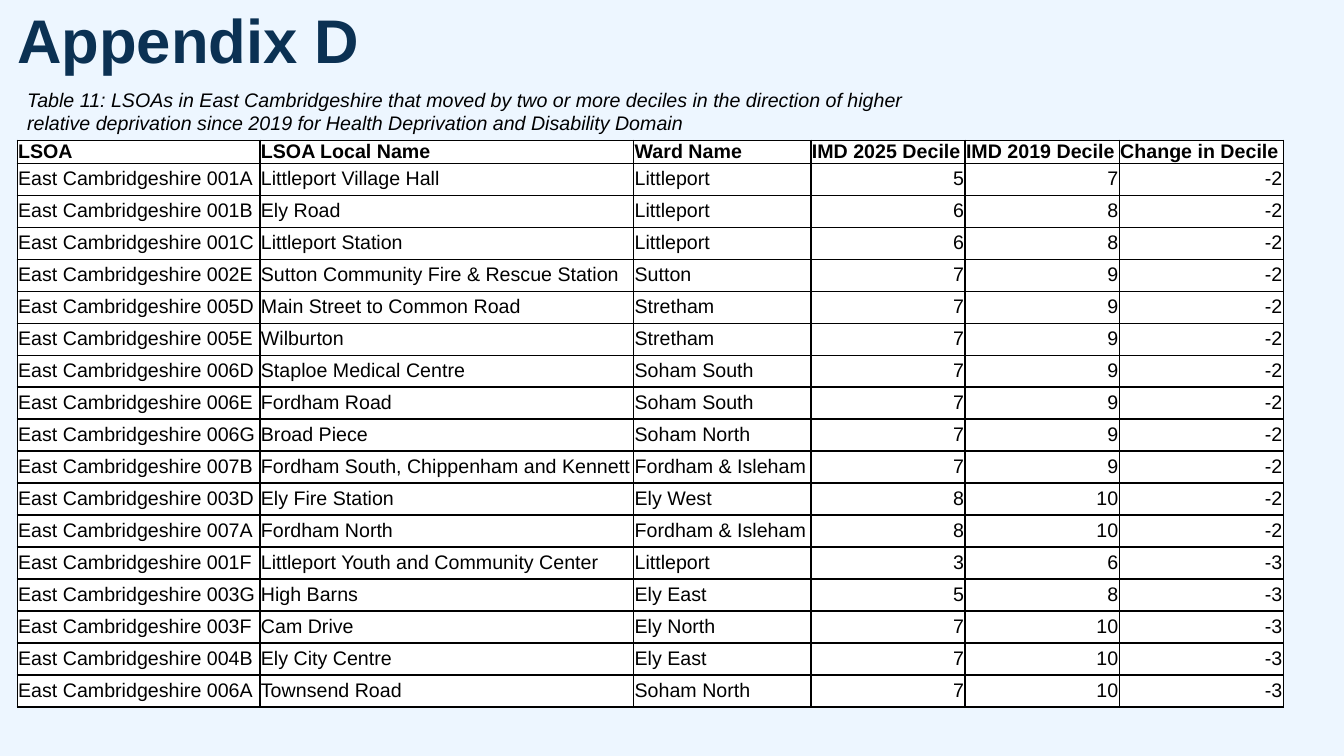
from lxml.etree import SubElement
from pptx import Presentation
from pptx.dml.color import RGBColor
from pptx.enum.text import MSO_ANCHOR as Anchor, PP_ALIGN as Align
from pptx.oxml.ns import qn
from pptx.util import Inches, Pt

COLORS = {"background": "EDF6FF", "title": "0B3153", "text": "000000",
          "border": "000000", "cell": "FFFFFF"}
FONT = "Arial"
SLIDE_WIDTH, SLIDE_HEIGHT = 13.33, 7.5
MARGIN = 0.17
HEADER_HEIGHT = 0.22
COLUMN_WIDTHS = [2.41, 3.71, 1.76, 1.53, 1.53, 1.63]
HEADERS = ["LSOA", "LSOA Local Name", "Ward Name",
           "IMD 2025 Decile", "IMD 2019 Decile", "Change in Decile"]
DISTRICT = "East Cambridgeshire"
# Area code, local name, ward, 2025 decile, 2019 decile
AREAS = [
    ("001A", "Littleport Village Hall", "Littleport", 5, 7),
    ("001B", "Ely Road", "Littleport", 6, 8),
    ("001C", "Littleport Station", "Littleport", 6, 8),
    ("002E", "Sutton Community Fire & Rescue Station", "Sutton", 7, 9),
    ("005D", "Main Street to Common Road", "Stretham", 7, 9),
    ("005E", "Wilburton", "Stretham", 7, 9),
    ("006D", "Staploe Medical Centre", "Soham South", 7, 9),
    ("006E", "Fordham Road", "Soham South", 7, 9),
    ("006G", "Broad Piece", "Soham North", 7, 9),
    ("007B", "Fordham South, Chippenham and Kennett", "Fordham & Isleham", 7, 9),
    ("003D", "Ely Fire Station", "Ely West", 8, 10),
    ("007A", "Fordham North", "Fordham & Isleham", 8, 10),
    ("001F", "Littleport Youth and Community Center", "Littleport", 3, 6),
    ("003G", "High Barns", "Ely East", 5, 8),
    ("003F", "Cam Drive", "Ely North", 7, 10),
    ("004B", "Ely City Centre", "Ely East", 7, 10),
    ("006A", "Townsend Road", "Soham North", 7, 10),
]


def write_text(frame, text, size=14, color="text", bold=False, italic=False,
               align=Align.LEFT, line_spacing=None, space_after=None):
    paragraph = frame.paragraphs[0]
    paragraph.alignment = align
    paragraph.line_spacing = line_spacing
    paragraph.space_after = space_after
    run = paragraph.add_run()
    run.text = text
    run.font.name = FONT
    run.font.size = Pt(size)
    run.font.bold = bold
    run.font.italic = italic
    run.font.color.rgb = RGBColor.from_string(COLORS[color])


def add_text_box(slide, box, text, inset=None, **text_format):
    frame = slide.shapes.add_textbox(*map(Inches, box)).text_frame
    frame.word_wrap = True
    if inset is not None:
        frame.margin_left = frame.margin_right = inset
        frame.margin_top = frame.margin_bottom = inset
    write_text(frame, text, **text_format)


def style_cell(cell, is_header):
    cell.margin_left = cell.margin_right = cell.margin_top = Inches(0.01)
    cell.margin_bottom = Inches(0 if is_header else 0.05)
    cell.vertical_anchor = Anchor.TOP if is_header else Anchor.BOTTOM
    properties = cell._tc.get_or_add_tcPr()
    for side in ("a:lnL", "a:lnR", "a:lnT", "a:lnB"):
        line = SubElement(properties, qn(side), w=str(Pt(1)))
        fill = SubElement(line, qn("a:solidFill"))
        SubElement(fill, qn("a:srgbClr"), val=COLORS["border"])
    cell.fill.solid()
    cell.fill.fore_color.rgb = RGBColor.from_string(COLORS["cell"])


def add_decile_table(slide, box):
    rows = [HEADERS] + [
        (f"{DISTRICT} {code}", name, ward, now, before, now - before)
        for code, name, ward, now, before in AREAS]
    left, top, width, height = box
    table = slide.shapes.add_table(
        len(rows), len(HEADERS), *map(Inches, box)).table
    for column, share in zip(table.columns, COLUMN_WIDTHS):
        column.width = Inches(width * share / sum(COLUMN_WIDTHS))
    row_height = (height - HEADER_HEIGHT) / len(AREAS)
    for row_index, values in enumerate(rows):
        is_header = row_index == 0
        table.rows[row_index].height = Inches(
            HEADER_HEIGHT if is_header else row_height)
        for column_index, value in enumerate(values):
            cell = table.cell(row_index, column_index)
            style_cell(cell, is_header)
            write_text(cell.text_frame, str(value), bold=is_header,
                       align=Align.RIGHT if isinstance(value, int) else Align.LEFT)


def build_appendix_slide(presentation):
    slide = presentation.slides.add_slide(presentation.slide_layouts[6])
    background = slide.background.fill
    background.solid()
    background.fore_color.rgb = RGBColor.from_string(COLORS["background"])
    add_decile_table(slide, (MARGIN, 1.39, 12.56, 5.62))
    add_text_box(slide, (MARGIN, 0.1, 11.5, 0.81), "Appendix D", inset=0,
                 size=44, color="title", bold=True,
                 line_spacing=0.9, space_after=Pt(6))
    add_text_box(slide, (MARGIN, 0.82, 9.55, 0.57),
                 "Table 11: LSOAs in East Cambridgeshire that moved by two or "
                 "more deciles in the direction of higher relative deprivation "
                 "since 2019 for Health Deprivation and Disability Domain",
                 italic=True)


def main():
    presentation = Presentation()
    presentation.slide_width = Inches(SLIDE_WIDTH)
    presentation.slide_height = Inches(SLIDE_HEIGHT)
    build_appendix_slide(presentation)
    presentation.save("out.pptx")


if __name__ == "__main__":
    main()
